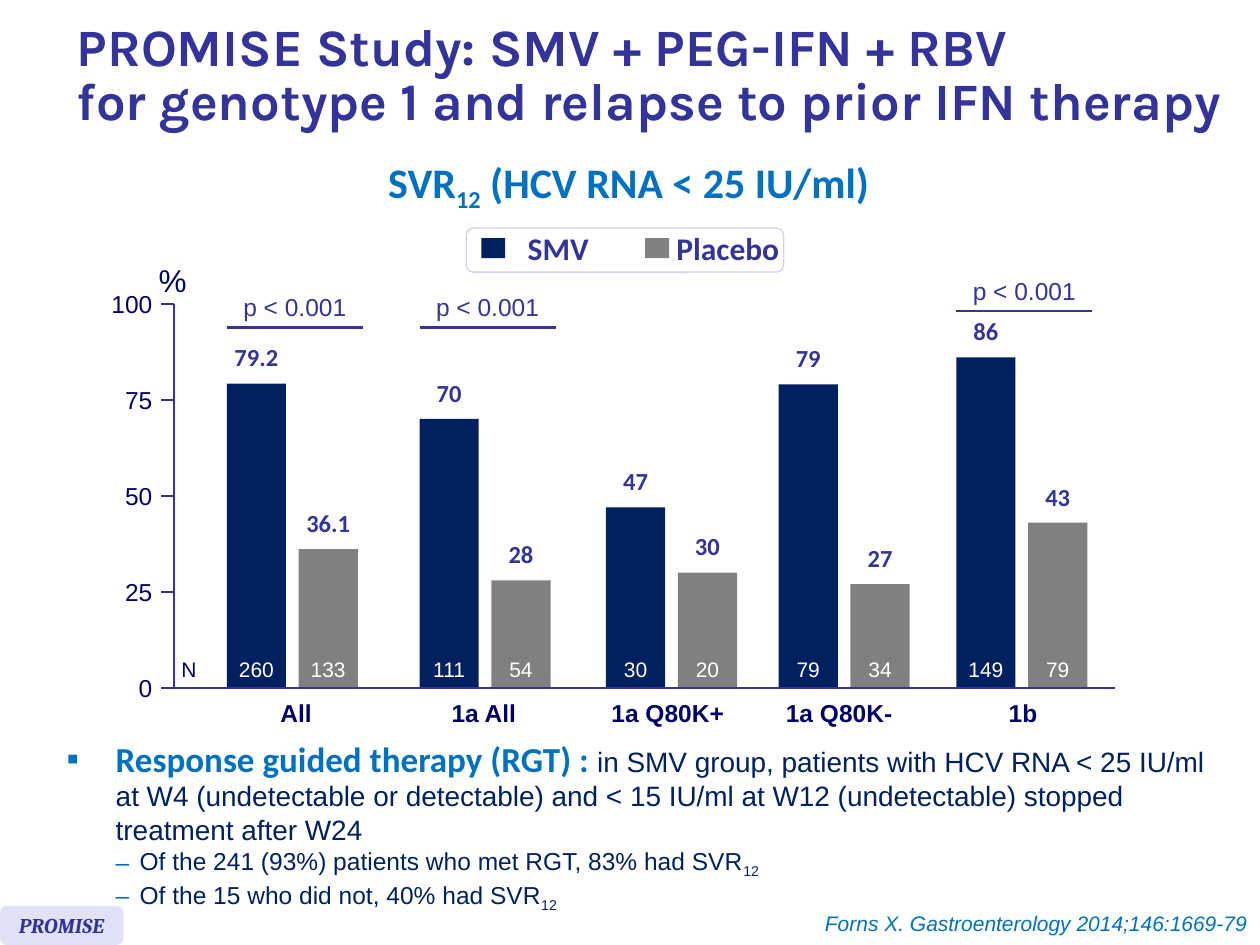
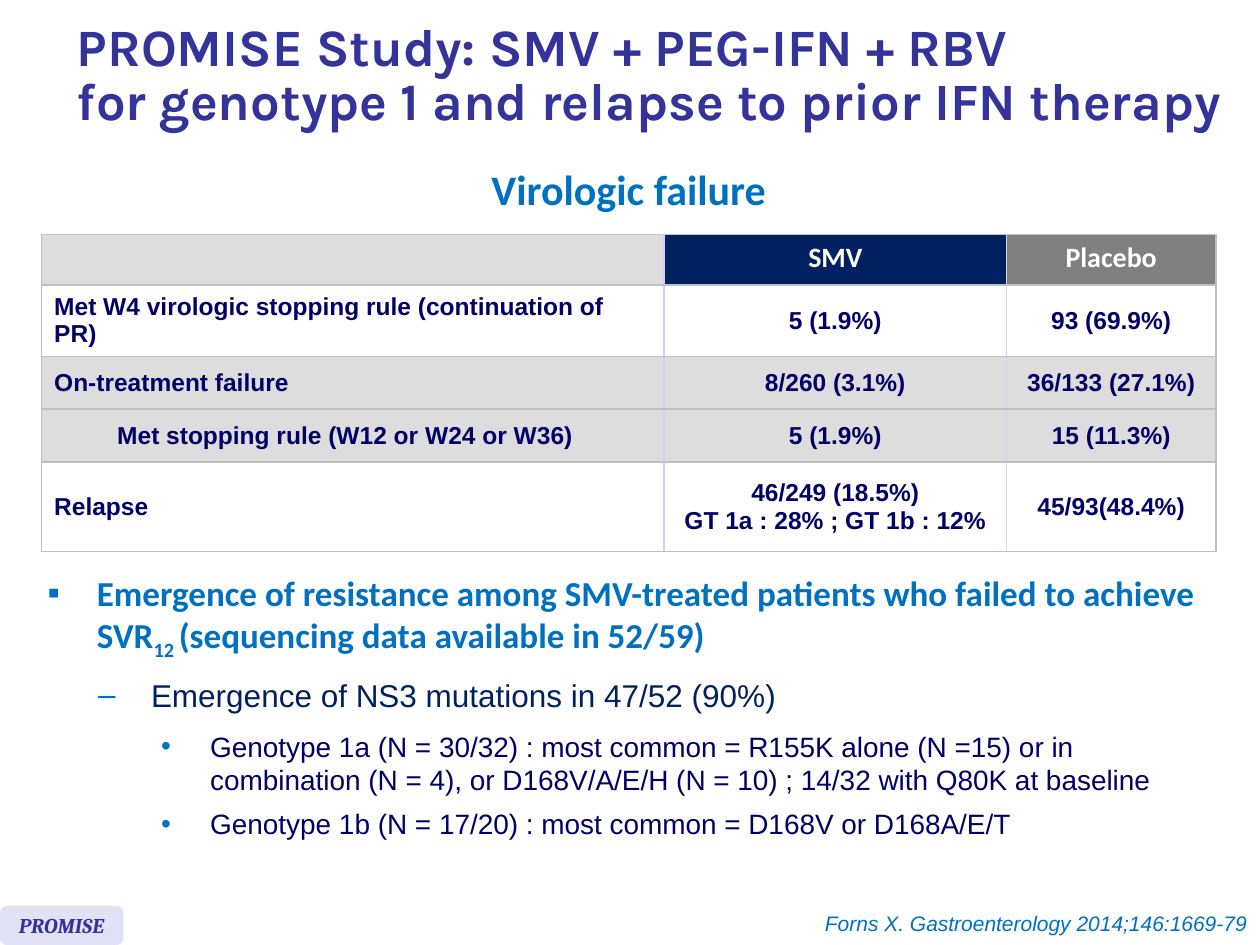
import dataclasses

import lxml.etree
import pptx
import pptx.dml.color
import pptx.enum.shapes
import pptx.enum.text
import pptx.oxml.ns
import pptx.util

Inches = pptx.util.Inches
Pt = pptx.util.Pt
qn = pptx.oxml.ns.qn
Align = pptx.enum.text.PP_ALIGN
Anchor = pptx.enum.text.MSO_ANCHOR
Shapes = pptx.enum.shapes.MSO_SHAPE

INDIGO = "333399"
DEEP_BLUE = "000066"
NAVY = "002060"
BLUE = "0070C0"
GREY = "808080"
PALE_GREY = "DDDDDD"
SILVER = "C0C0C0"
LAVENDER = "D0D0F0"
PALE_LAVENDER = "E2E2F6"
WHITE = "FFFFFF"


@dataclasses.dataclass(frozen=True)
class Style:
    size: int
    name: str
    color: str
    bold: bool = False
    italic: bool = False
    baseline: int = 0

    def but(self, **changes):
        return dataclasses.replace(self, **changes)

    def subscript(self):
        return self.but(baseline=-25000)


TITLE = Style(30, "Karla", INDIGO, bold=True)
SUBTITLE = Style(24, "Calibri", BLUE, bold=True)
LEAD = Style(20, "Calibri", BLUE, bold=True)
BODY = Style(16, "Arial", NAVY)
DETAIL = BODY.but(size=14)
BADGE = Style(12, "Cambria", INDIGO, bold=True, italic=True)
CITATION = Style(12, "Arial", BLUE, italic=True)
LEGEND = Style(18, "Calibri", INDIGO, bold=True)
VALUE = LEGEND.but(size=14)
AXIS = Style(14, "Arial", DEEP_BLUE)
CATEGORY = AXIS.but(bold=True)
P_VALUE = AXIS.but(color=INDIGO)
COUNT = Style(12, "Arial", WHITE)
HEADER = Style(16, "Calibri", WHITE, bold=True)


@dataclasses.dataclass(frozen=True)
class Group:
    label: str
    left: float
    label_center: float
    values: tuple
    counts: tuple
    p_line: float = 0


GROUPS = [
    Group("All", 1.8, 2.35, (79.2, 36.1), (260, 133), 2.6),
    Group("1a All", 3.33, 3.84, (70, 28), (111, 54), 2.6),
    Group("1a Q80K+", 4.81, 5.3, (47, 30), (30, 20)),
    Group("1a Q80K-", 6.18, 6.66, (79, 27), (79, 34)),
    Group("1b", 7.59, 8.12, (86, 43), (149, 79), 2.47),
]

FAILURE_ROWS = [
    ("", "SMV", "Placebo"),
    ("Met W4 virologic stopping rule (continuation of PR)", "5 (1.9%)", "93 (69.9%)"),
    ("On-treatment failure", "8/260 (3.1%)", "36/133 (27.1%)"),
    ("Met stopping rule (W12 or W24 or W36)", "5 (1.9%)", "15 (11.3%)"),
    ("Relapse", "46/249 (18.5%)\nGT 1a : 28% ; GT 1b : 12%", "45/93(48.4%)"),
]


def color(value):
    return pptx.dml.color.RGBColor.from_string(value)


def box(left, top, width, height):
    return Inches(left), Inches(top), Inches(width), Inches(height)


def add_color(parent, tag, value):
    element = lxml.etree.SubElement(parent, qn(tag))
    lxml.etree.SubElement(element, qn("a:srgbClr"), val=value)


def format_run(run, style):
    run.font.size = Pt(style.size)
    run.font.name = style.name
    run.font.bold = style.bold
    run.font.italic = style.italic
    run.font.color.rgb = color(style.color)
    if style.baseline:
        run._r.get_or_add_rPr().set("baseline", str(style.baseline))


def fill_paragraph(paragraph, runs):
    for text, style in runs:
        run = paragraph.add_run()
        run.text = text
        format_run(run, style)


def indent(paragraph, left, hanging=0):
    properties = paragraph._p.get_or_add_pPr()
    properties.set("marL", str(Inches(left)))
    properties.set("indent", str(-Inches(hanging)))
    return properties


class Deck:
    def __init__(self):
        self.presentation = pptx.Presentation()
        self.presentation.slide_width = Inches(10)
        self.presentation.slide_height = Inches(7.5)
        self.slide = None

    def start_slide(self, subtitle_runs):
        self.slide = self.presentation.slides.add_slide(self.presentation.slide_layouts[5])
        title = self.slide.shapes.title
        title.left, title.top, title.width, title.height = box(0.51, 0.08, 9.49, 1.07)
        frame = title.text_frame
        frame.text = "PROMISE Study: SMV + PEG-IFN + RBV\vfor genotype 1 and relapse to prior IFN therapy"
        frame.vertical_anchor = Anchor.MIDDLE
        frame.auto_size = pptx.enum.text.MSO_AUTO_SIZE.NONE
        frame.paragraphs[0].alignment = Align.LEFT
        frame.paragraphs[0].line_spacing = 0.85
        for run in frame.paragraphs[0].runs:
            format_run(run, TITLE)
        subtitle = self.text(2.89, 1.32, 4.2, 0.44, subtitle_runs, Align.CENTER)
        subtitle.paragraphs[0].line_spacing = Pt(23.6)
        badge = self.shape(Shapes.ROUNDED_RECTANGLE, 0, 7.19, 0.98, 0.31, PALE_LAVENDER)
        badge.text_frame.word_wrap = False
        badge.text_frame.vertical_anchor = Anchor.MIDDLE
        badge.text_frame.paragraphs[0].alignment = Align.CENTER
        fill_paragraph(badge.text_frame.paragraphs[0], [("PROMISE", BADGE)])
        self.text(6.37, 7.18, 3.63, 0.3,
                  [("Forns X. Gastroenterology 2014;146:1669-79", CITATION)], Align.RIGHT)

    def text(self, left, top, width, height, runs, align=Align.LEFT,
             anchor=Anchor.TOP, margin=None):
        frame = self.slide.shapes.add_textbox(*box(left, top, width, height)).text_frame
        frame.word_wrap = False
        frame.vertical_anchor = anchor
        if margin is not None:
            frame.margin_left = frame.margin_right = Inches(margin)
            frame.margin_top = frame.margin_bottom = Inches(margin)
        frame.paragraphs[0].alignment = align
        fill_paragraph(frame.paragraphs[0], runs)
        return frame

    def centered(self, center, top, width, height, text, style, **options):
        self.text(center - width / 2, top, width, height, [(str(text), style)],
                  Align.CENTER, **options)

    def bullets(self, left, top, width, height, items):
        frame = self.text(left, top, width, height, [])
        frame.word_wrap = True
        for number, (level, symbol, margin, hanging, space_after, runs) in enumerate(items):
            paragraph = frame.add_paragraph() if number else frame.paragraphs[0]
            paragraph.level = level
            paragraph.space_after = Pt(space_after)
            properties = indent(paragraph, margin, hanging)
            add_color(properties, "a:buClr", BLUE)
            lxml.etree.SubElement(properties, qn("a:buFont"), typeface="Arial")
            lxml.etree.SubElement(properties, qn("a:buChar"), char=symbol)
            fill_paragraph(paragraph, runs)

    def shape(self, kind, left, top, width, height, fill, line=None):
        shape = self.slide.shapes.add_shape(kind, *box(left, top, width, height))
        shape.shadow.inherit = False
        shape.fill.solid()
        shape.fill.fore_color.rgb = color(fill)
        if line:
            shape.line.color.rgb = color(line)
            shape.line.width = Pt(0.75)
        else:
            shape.line.fill.background()
        return shape

    def line(self, left, top, right, bottom, width=1):
        connector = self.slide.shapes.add_connector(
            pptx.enum.shapes.MSO_CONNECTOR.STRAIGHT,
            Inches(left), Inches(top), Inches(right), Inches(bottom))
        connector.line.color.rgb = color(INDIGO)
        connector.line.width = Pt(width)
        lxml.etree.SubElement(connector._element.spPr, qn("a:effectLst"))

    def table(self, left, top, widths, heights, rows, fills):
        table = self.slide.shapes.add_table(
            len(rows), len(widths), *box(left, top, sum(widths), sum(heights))).table
        table.first_row = table.horz_banding = False
        for column, width in zip(table.columns, widths):
            column.width = Inches(width)
        for row, height in zip(table.rows, heights):
            row.height = Inches(height)
        for row_index, row in enumerate(rows):
            for column_index, text in enumerate(row):
                cell = table.cell(row_index, column_index)
                cell.text = text
                cell.vertical_anchor = Anchor.MIDDLE
                self.cell_borders(cell, column_index == 0, column_index == len(widths) - 1)
                cell.fill.solid()
                cell.fill.fore_color.rgb = color(fills[row_index][column_index])
                for paragraph in cell.text_frame.paragraphs:
                    paragraph.alignment = Align.CENTER if column_index else Align.LEFT
                    if row_index == 0:
                        paragraph.line_spacing = 0.8
                    for run in paragraph.runs:
                        format_run(run, CATEGORY if row_index else HEADER)
        return table

    def cell_borders(self, cell, first, last):
        properties = cell._tc.get_or_add_tcPr()
        edges = {"L": SILVER if first else LAVENDER, "R": SILVER if last else LAVENDER,
                 "T": SILVER, "B": SILVER}
        for edge, value in edges.items():
            border = lxml.etree.SubElement(properties, qn("a:ln" + edge), w=str(Pt(1)))
            add_color(border, "a:solidFill", value)


def draw_legend(deck):
    deck.shape(Shapes.ROUNDED_RECTANGLE, 3.7, 1.81, 2.52, 0.35, WHITE, LAVENDER)
    for name, fill, key_left, text_left in (("SMV", NAVY, 3.82, 4.09),
                                            ("Placebo", GREY, 5.12, 5.27)):
        deck.shape(Shapes.RECTANGLE, key_left, 1.89, 0.19, 0.16, fill)
        deck.text(text_left, 1.77, 1.03, 0.4, [(name, LEGEND)])


def draw_response_chart(deck):
    baseline, axis_left, unit = 5.46, 1.38, 0.0305
    bar_width, bar_step = 0.47, 0.57
    deck.text(1.16, 2.02, 0.42, 0.4, [("%", AXIS.but(size=18))])
    for group in GROUPS:
        for index, fill in enumerate((NAVY, GREY)):
            value = group.values[index]
            left = group.left + index * bar_step
            center = left + bar_width / 2
            top = baseline - value * unit
            deck.shape(Shapes.RECTANGLE, left, top, bar_width, value * unit, fill)
            deck.centered(center, top - 0.43, 0.6, 0.44, value, VALUE,
                          anchor=Anchor.MIDDLE, margin=0.1)
            deck.centered(center, 5.16, 0.6, 0.3, group.counts[index], COUNT,
                          anchor=Anchor.MIDDLE)
        deck.centered(group.label_center, 5.49, 1.3, 0.34, group.label, CATEGORY)
        if group.p_line:
            deck.line(group.left, group.p_line, group.left + 1.08, group.p_line, 1.5)
            deck.centered(group.left + 0.54, group.p_line - 0.33, 1.2, 0.34,
                          "p < 0.001", P_VALUE)
    deck.centered(1.5, 5.16, 0.4, 0.3, "N", COUNT.but(color=DEEP_BLUE), anchor=Anchor.MIDDLE)
    for tick in range(0, 101, 25):
        height = baseline - tick * unit
        deck.line(1.28, height, axis_left, height)
        deck.text(0.81, height - 0.12, 0.4, 0.24, [(str(tick), AXIS)], Align.RIGHT,
                  Anchor.MIDDLE, 0)
    deck.line(axis_left, baseline - 100 * unit, axis_left, baseline)
    deck.line(axis_left, baseline, 8.85, baseline)


def response_slide(deck):
    deck.start_slide([("SVR", SUBTITLE), ("12", SUBTITLE.subscript()),
                      (" (HCV RNA < 25 IU/ml)", SUBTITLE)])
    draw_legend(deck)
    draw_response_chart(deck)
    outcomes = ("Of the 241 (93%) patients who met RGT, 83% had SVR",
                "Of the 15 who did not, 40% had SVR")
    deck.bullets(0.43, 5.8, 9.29, 1.45, [
        (0, "▪", 0.39, 0.39, 0, [
            ("Response guided therapy (RGT) : ", LEAD),
            ("in SMV group, patients with HCV RNA < 25 IU/ml at W4 (undetectable or "
             "detectable) and < 15 IU/ml at W12 (undetectable) stopped treatment after W24",
             BODY)]),
        *[(1, "–", 0.58, 0.19, 0, [(outcome, DETAIL), ("12", DETAIL.subscript())])
          for outcome in outcomes],
    ])


def failure_slide(deck):
    deck.start_slide([("Virologic failure", SUBTITLE)])
    fills = [(PALE_GREY, NAVY, GREY)] + [
        (fill,) * 3 for fill in (WHITE, PALE_GREY, PALE_GREY, WHITE)]
    table = deck.table(0.33, 1.86, (4.94, 2.72, 1.66), (0.4, 0.42, 0.42, 0.42, 0.71),
                       FAILURE_ROWS, fills)
    indent(table.cell(3, 0).text_frame.paragraphs[0], 0.5)
    mutation = BODY.but(color=DEEP_BLUE)
    deck.bullets(0.28, 4.49, 9.45, 2.14, [
        (0, "▪", 0.39, 0.39, 8, [
            ("Emergence of resistance among SMV-treated patients who failed to achieve SVR", LEAD),
            ("12 ", LEAD.subscript()),
            ("(sequencing data available in 52/59)", LEAD)]),
        (1, "–", 0.82, 0.42, 9, [
            ("Emergence of NS3 mutations in 47/52 (90%)", BODY.but(size=18))]),
        (2, "•", 1.29, 0.39, 6, [
            ("Genotype 1a (N = 30/32) : most common = R155K alone (N =15) or in combination "
             "(N = 4), or D168V/A/E/H (N = 10) ; 14/32 with Q80K at baseline", mutation)]),
        (2, "•", 1.29, 0.39, 6, [
            ("Genotype 1b (N = 17/20) : most common = D168V or D168A/E/T", mutation)]),
    ])


def main():
    deck = Deck()
    response_slide(deck)
    failure_slide(deck)
    deck.presentation.save("out.pptx")


if __name__ == "__main__":
    main()
